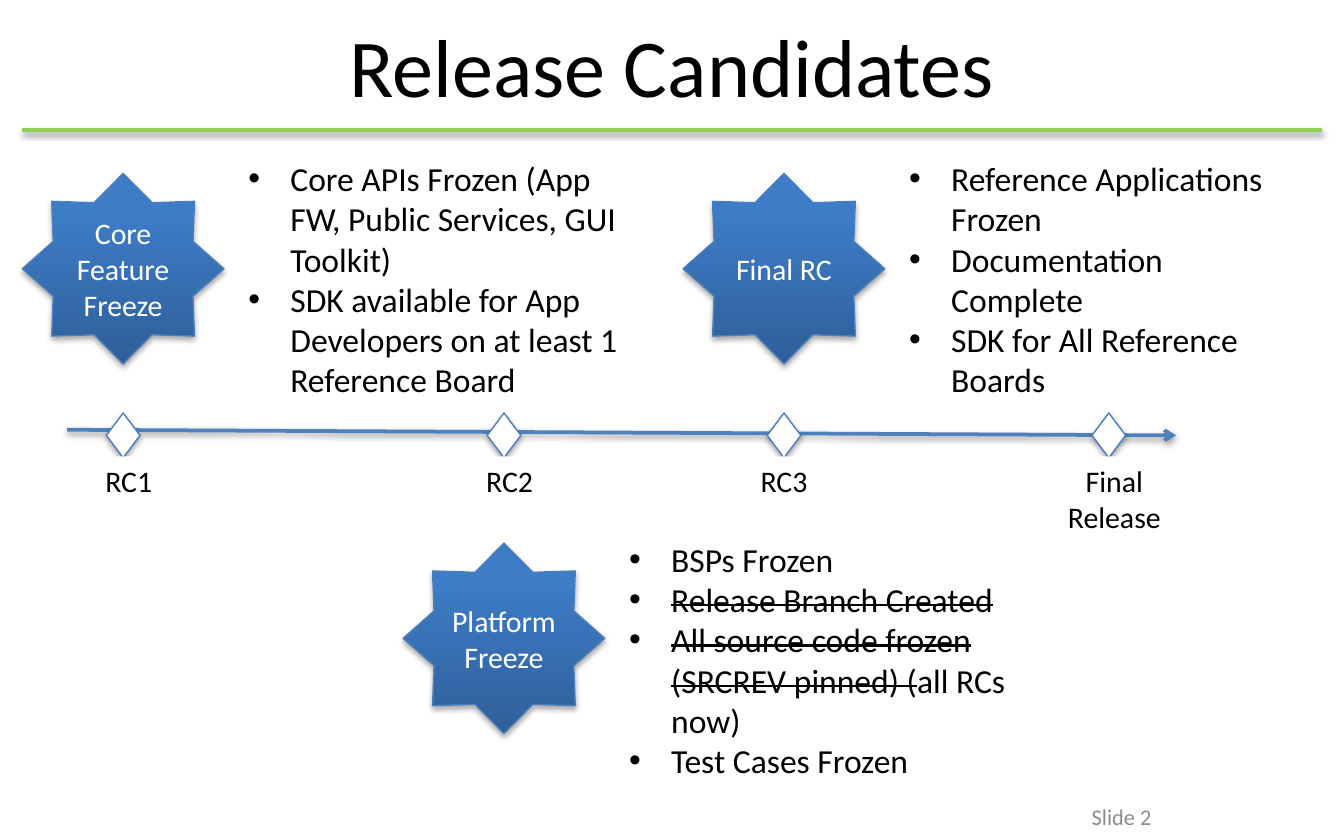
from lxml import etree
from pptx import Presentation
from pptx.dml.color import RGBColor
from pptx.enum.shapes import MSO_CONNECTOR as Conn, MSO_SHAPE as Kind
from pptx.enum.text import MSO_ANCHOR as Anchor, MSO_AUTO_SIZE as Fit, PP_ALIGN as Align
from pptx.oxml.ns import qn
from pptx.util import Pt

PX = 9525  # 96 px to the inch

# Content: a list item is a list of (text, struck) runs
TITLE = "Release Candidates"
FOOT = "Slide 2"
MARKS = [  # middle of diamond, label lines, label left, width, height
    (88, ["RC1"], 32, 120, 36),
    (560, ["RC3"], 520, 80, 36),
    (360, ["RC2"], 304, 120, 36),
    (792, ["Final", "Release"], 752, 88, 61),
]
STEPS = [  # middle of star, star top, star text, list top, list height, items
    (88, 124, "Core Feature Freeze", 108, 184, [
        [("Core APIs Frozen (App FW, Public Services, GUI Toolkit)", False)],
        [("SDK available for App Developers on at least 1 Reference Board", False)],
    ]),
    (360, 388, "Platform Freeze", 380, 213, [
        [("BSPs Frozen", False)],
        [("Release Branch Created", True)],
        [("All source code frozen (SRCREV pinned) (", True), ("all RCs now)", False)],
        [("Test Cases Frozen", False)],
    ]),
    (560, 124, "Final RC", 108, 184, [
        [("Reference Applications Frozen", False)],
        [("Documentation Complete", False)],
        [("SDK for All Reference Boards", False)],
    ]),
]

# Formats
BIG = dict(size=44, color="000000", align=Align.CENTER)
SMALL = dict(size=12, color="8C8C8C", align=Align.RIGHT)
LABEL = dict(size=16, color="000000", align=Align.CENTER)
STAR = dict(size=16, color="FFFFFF", align=Align.CENTER)
LIST = dict(size=18, color="000000", align=Align.LEFT)
MID = dict(vertical_anchor=Anchor.MIDDLE, word_wrap=True)
GROW = dict(vertical_anchor=Anchor.TOP, word_wrap=True, auto_size=Fit.SHAPE_TO_FIT_TEXT)


def px(*nums):
    return [round(n * PX) for n in nums]


def rgb(code):
    return RGBColor.from_string(code)


def apply(obj, vals):
    for name, val in vals.items():
        setattr(obj, name, val)


def shade(shape, alpha, dist):
    """Give the shape a soft shadow straight below it."""
    props = shape._element.spPr
    box = etree.SubElement(props, qn("a:effectLst"))
    drop = etree.SubElement(box, qn("a:outerShdw"), blurRad="40000", dist=str(dist),
                            dir="5400000", rotWithShape="0")
    tint = etree.SubElement(drop, qn("a:srgbClr"), val="000000")
    etree.SubElement(tint, qn("a:alpha"), val=str(alpha * 1000))


def write(shape, paras, form, frame, dots=False):
    text = shape.text_frame
    apply(text, frame)
    for i, runs in enumerate(paras):
        para = text.add_paragraph() if i else text.paragraphs[0]
        if dots:
            props = para._p.get_or_add_pPr()
            props.set("marL", str(30 * PX))
            props.set("indent", str(-30 * PX))
            etree.SubElement(props, qn("a:buFont"), typeface="Arial")
            etree.SubElement(props, qn("a:buChar"), char="•")
        para.alignment = form["align"]
        for words, struck in runs:
            run = para.add_run()
            run.text = words
            apply(run.font, dict(name="Calibri", size=Pt(form["size"])))
            run.font.color.rgb = rgb(form["color"])
            if struck:
                run._r.get_or_add_rPr().set("strike", "sngStrike")


def rule(shapes, ends, color):
    line = shapes.add_connector(Conn.STRAIGHT, *px(*ends))
    line.line.color.rgb = rgb(color)
    line.line.width = Pt(2)
    shade(line, 38, 20000)
    return line


def edge(shape):
    shape.line.color.rgb = rgb("4B7EBC")
    shape.line.width = Pt(0.75)
    shade(shape, 35, 23000)


def mark(shapes, mid, lines, left, wide, high):
    """Diamond on the time line with its label below."""
    group = shapes.add_group_shape().shapes
    gem = group.add_shape(Kind.DIAMOND, *px(mid - 12, 295, 24, 32))
    label = group.add_shape(Kind.RECTANGLE, *px(left, 326, wide, high))
    for shape in (gem, label):
        shape.fill.solid()
        shape.fill.fore_color.rgb = rgb("FFFFFF")
    edge(gem)
    label.line.fill.background()
    label.shadow.inherit = False
    write(label, [[(line, False)] for line in lines], LABEL, GROW)


def step(shapes, mid, top, name, head, high, items):
    """Star with its bullet list to the right."""
    star = shapes.add_shape(Kind.STAR_8_POINT, *px(mid - 72, top, 144, 136))
    star.fill.gradient()
    star.fill.gradient_angle = 90
    for stop, spot, color in zip(star.fill.gradient_stops, (0, 0.8), ("2F5F99", "3D7CC7")):
        stop.position = spot
        stop.color.rgb = rgb(color)
    edge(star)
    write(star, [[(name, False)]], STAR, MID)
    box = shapes.add_textbox(*px(mid + 80, head, 296, high))
    write(box, items, LIST, GROW, dots=True)


def main():
    deck = Presentation()
    deck.slide_width, deck.slide_height = px(960, 600)
    shapes = deck.slides.add_slide(deck.slide_layouts[6]).shapes

    # Title, rule and slide number
    rule(shapes, (16, 93, 944, 93), "92D050")
    for words, area, form in ((TITLE, (48, 12, 864, 68), BIG),
                              (FOOT, (688, 570, 144, 26), SMALL)):
        write(shapes.add_textbox(*px(*area)), [[(words, False)]], form, MID)

    # Time line
    axis = rule(shapes, (48, 307, 840, 311), "4F81BD")
    etree.SubElement(axis.line._get_or_add_ln(), qn("a:tailEnd"), type="arrow")
    for row in MARKS:
        mark(shapes, *row)

    # Stars and lists
    for row in STEPS:
        step(shapes, *row)

    deck.save("out.pptx")


if __name__ == "__main__":
    main()
